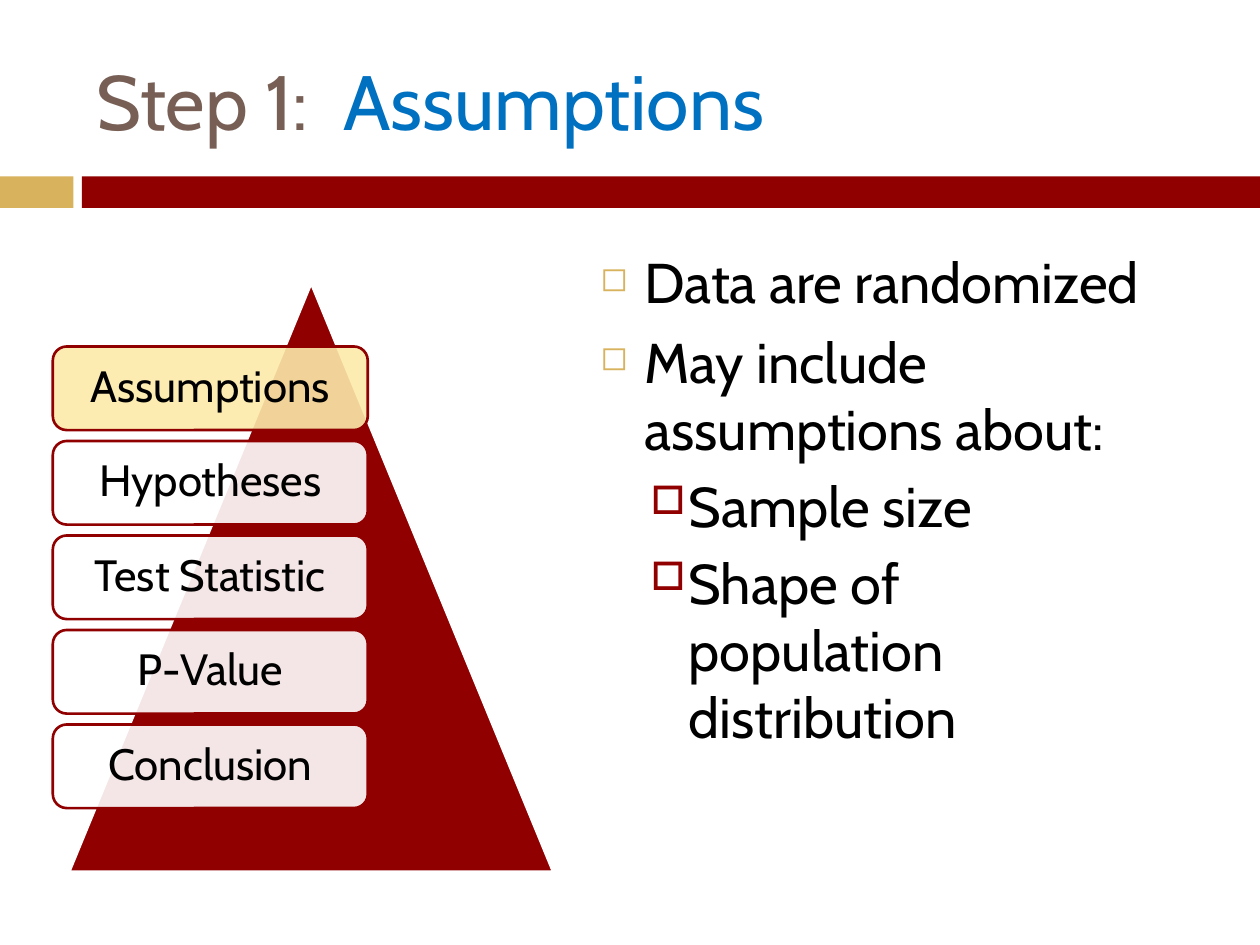
from lxml import etree
from pptx import Presentation
from pptx.dml.color import RGBColor
from pptx.enum import shapes, text
from pptx.oxml import ns
from pptx.util import Pt

FONT = "Cabin"
COLORS = {
    "gold": "D8B25C", "red": "900000", "brown": "775F55", "blue": "0070C0",
    "black": "000000", "white": "FFFFFF", "highlight": "FCEAAA",
}


def add_filled(kind, left, top, width, height, fill, line=None):
    shape = page.shapes.add_shape(kind, Pt(left), Pt(top), Pt(width), Pt(height))
    shape.shadow.inherit = False
    shape.fill.solid()
    shape.fill.fore_color.rgb = RGBColor.from_string(COLORS[fill])
    if line:
        shape.line.color.rgb = RGBColor.from_string(COLORS[line])
        shape.line.width = Pt(1.5)
    else:
        shape.line.fill.background()
    return shape


def add_bullet(para, char, color, percent, left, hanging):
    props = para._p.get_or_add_pPr()
    props.set("marL", str(Pt(left)))
    props.set("indent", str(-Pt(hanging)))
    bullet_color = etree.SubElement(props, ns.qn("a:buClr"))
    etree.SubElement(bullet_color, ns.qn("a:srgbClr"), val=COLORS[color])
    etree.SubElement(props, ns.qn("a:buSzPct"), val=str(percent * 1000))
    etree.SubElement(props, ns.qn("a:buChar"), char=char)


deck = Presentation()
deck.slide_width, deck.slide_height = Pt(720), Pt(540)
page = deck.slides.add_slide(deck.slide_layouts[6])

# Header band and title
add_filled(shapes.MSO_SHAPE.RECTANGLE, 0, 100.8, 42, 18, "gold")
add_filled(shapes.MSO_SHAPE.RECTANGLE, 46.8, 100.8, 673.2, 18, "red")

title = page.shapes.add_textbox(Pt(48), Pt(18), Pt(642), Pt(78)).text_frame
title.word_wrap = True
title.vertical_anchor = text.MSO_ANCHOR.MIDDLE
para = title.paragraphs[0]
para.font.name, para.font.size = FONT, Pt(44)
for words, color in (("Step 1:  ", "brown"), ("Assumptions", "blue")):
    span = para.add_run()
    span.text = words
    span.font.color.rgb = RGBColor.from_string(COLORS[color])

# Bulleted points
points = [
    ("Data are randomized", 0),
    ("May include assumptions about:", 0),
    ("Sample size", 1),
    ("Shape of population distribution", 1),
]
levels = [  # space before, then bullet: character, colour, percent, left, hanging
    (7, ("◻", "gold", 60, 25.2, 25.2)),
    (5.5, ("□", "red", 70, 50.4, 21.6)),
]
body = page.shapes.add_textbox(Pt(336), Pt(138), Pt(324), Pt(354)).text_frame
body.word_wrap = True
for index, (words, level) in enumerate(points):
    para = body.add_paragraph() if index else body.paragraphs[0]
    para.text, para.level = words, level
    para.font.name, para.font.size = FONT, Pt(32)
    para.font.color.rgb = RGBColor.from_string(COLORS["black"])
    space, bullet = levels[level]
    para.space_before = Pt(space)
    add_bullet(para, *bullet)

# Pyramid with the five steps
add_filled(shapes.MSO_SHAPE.ISOSCELES_TRIANGLE, 39.6, 162, 276.5, 336.2, "red", "white")
steps = ["Assumptions", "Hypotheses", "Test Statistic", "P-Value", "Conclusion"]
for index, step in enumerate(steps):
    box = add_filled(shapes.MSO_SHAPE.ROUNDED_RECTANGLE, 30.2, 198 + 54 * index,
                     180, 47.8, "white" if index else "highlight", "red")
    fill_color = box.fill._xPr.find(".//" + ns.qn("a:srgbClr"))
    etree.SubElement(fill_color, ns.qn("a:alpha"), val="90000")
    frame = box.text_frame
    frame.word_wrap = True
    frame.vertical_anchor = text.MSO_ANCHOR.MIDDLE
    frame.margin_left = frame.margin_right = Pt(7.2)
    para = frame.paragraphs[0]
    para.text = step
    para.alignment = text.PP_ALIGN.CENTER
    para.line_spacing = 0.9
    para.font.name, para.font.size = FONT, Pt(25)
    para.font.color.rgb = RGBColor.from_string(COLORS["black"])

deck.save("out.pptx")
